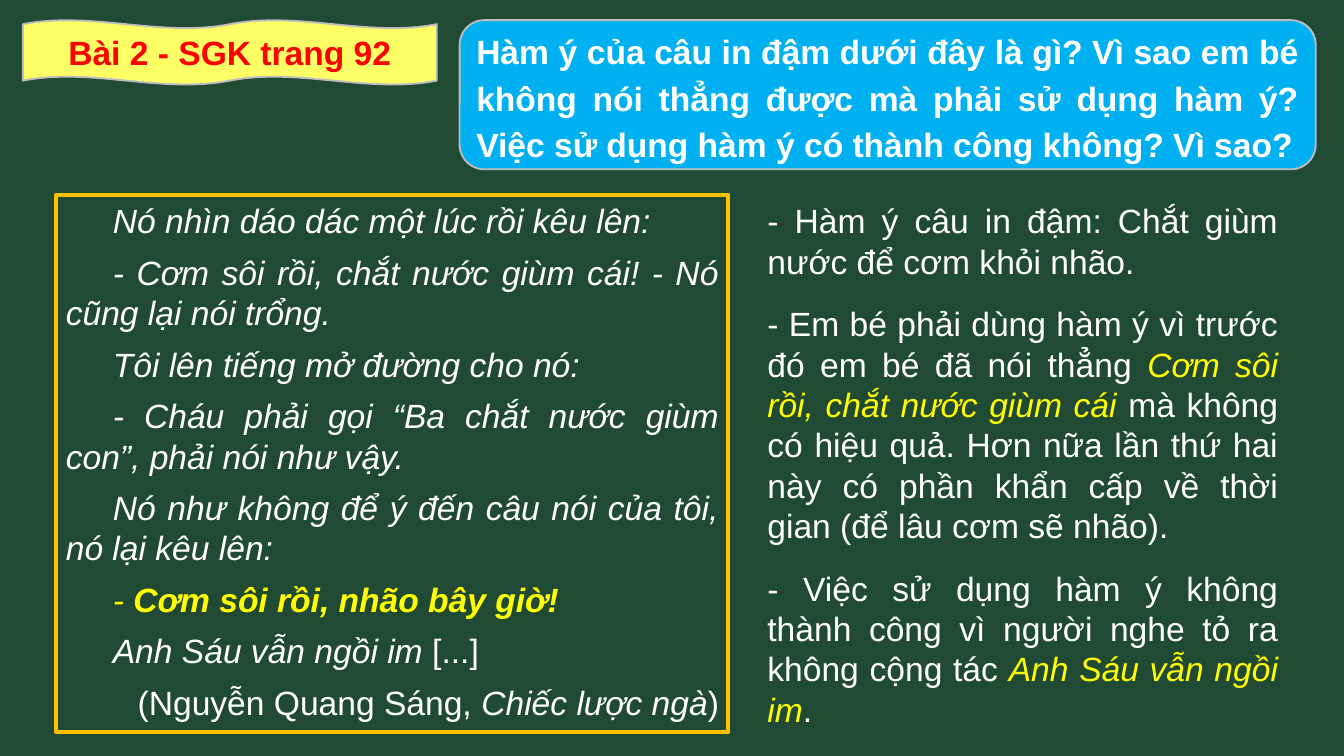
import pptx
import pptx.util
import pptx.dml.color
import pptx.enum.shapes
import pptx.enum.text

Inches = pptx.util.Inches
Pt = pptx.util.Pt
SHAPES = pptx.enum.shapes.MSO_SHAPE
ALIGN = pptx.enum.text.PP_ALIGN
ANCHOR = pptx.enum.text.MSO_ANCHOR
WHITE, YELLOW, GREY = "FFFFFF", "FFFF00", "BDBDBD"


def paint(target, color):
    """Give a fill a solid colour."""
    target.solid()
    target.fore_color.rgb = pptx.dml.color.RGBColor.from_string(color)


def write(shape, paragraphs, align=ALIGN.JUSTIFY, anchor=ANCHOR.TOP, before=0, after=0,
          spacing=1.0, indent=0, inset=(0.07, 0.04)):
    """Each paragraph is a list of (text, colour, style); style holds b and/or i."""
    frame = shape.text_frame
    frame.word_wrap = True
    frame.vertical_anchor = anchor
    frame.margin_left = frame.margin_right = Inches(inset[0])
    frame.margin_top = frame.margin_bottom = Inches(inset[1])
    for index, runs in enumerate(paragraphs):
        paragraph = frame.paragraphs[0] if index == 0 else frame.add_paragraph()
        paragraph.alignment = align
        paragraph.space_before, paragraph.space_after = Pt(before), Pt(after)
        paragraph.line_spacing = spacing
        if indent:
            paragraph._p.get_or_add_pPr().set("indent", str(Inches(indent)))
        for text, color, style in runs:
            run = paragraph.add_run()
            run.text = text
            run.font.name, run.font.size = "Arial", Pt(18)
            run.font.bold, run.font.italic = "b" in style, "i" in style
            paint(run.font.fill, color)


# Widescreen slide, 16 to 9
presentation = pptx.Presentation()
presentation.slide_width = Inches(10)
presentation.slide_height = Inches(10 * 9 / 16)
slide = presentation.slides.add_slide(presentation.slide_layouts[6])
paint(slide.background.fill, "214A34")

# Frames: passage, question and, in front, the exercise label
passage = slide.shapes.add_shape(
    SHAPES.RECTANGLE, Inches(0.42), Inches(1.45), Inches(5), Inches(4))
question = slide.shapes.add_shape(
    SHAPES.ROUNDED_RECTANGLE, Inches(3.42), Inches(0.15), Inches(6.37), Inches(1.11))
answers = slide.shapes.add_textbox(Inches(5.64), Inches(1.45), Inches(3.94), Inches(4.05))
label = slide.shapes.add_shape(
    SHAPES.DOUBLE_WAVE, Inches(0.17), Inches(0.15), Inches(3.08), Inches(0.48))
for shape, fill, line, width in [
    (passage, None, "FFC000", 2.25),
    (question, "00B0F0", GREY, 1),
    (label, "FFFF66", GREY, 1),
]:
    shape.shadow.inherit = False
    if fill:
        paint(shape.fill, fill)
    else:
        shape.fill.background()
    paint(shape.line.fill, line)
    shape.line.width = Pt(width)

# Passage from the story
write(passage, [
    [("Nó nhìn dáo dác một lúc rồi kêu lên:", WHITE, "i")],
    [("- Cơm sôi rồi, chắt nước giùm cái! - Nó cũng lại nói trổng.", WHITE, "i")],
    [("Tôi lên tiếng mở đường cho nó:", WHITE, "i")],
    [("- Cháu phải gọi “Ba chắt nước giùm con”, phải nói như vậy.", WHITE, "i")],
    [("Nó như không để ý đến câu nói của tôi, nó lại kêu lên:", WHITE, "i")],
    [("- ", YELLOW, "i"), ("Cơm sôi rồi, nhão bây giờ!", YELLOW, "bi")],
    [("Anh Sáu vẫn ngồi im ", WHITE, "i"), ("[...]", WHITE, "")],
    [("(Nguyễn Quang Sáng, ", WHITE, ""), ("Chiếc lược ngà", WHITE, "i"), (")", WHITE, "")],
], before=6, indent=0.35)
source_line = passage.text_frame.paragraphs[-1]
source_line.alignment = ALIGN.RIGHT
source_line._p.pPr.set("indent", "0")

# Question and label
write(question, [[("Hàm ý của câu in đậm dưới đây là gì? Vì sao em bé không nói thẳng được "
                   "mà phải sử dụng hàm ý? Việc sử dụng hàm ý có thành công không? Vì sao?",
                   WHITE, "b")]],
      anchor=ANCHOR.MIDDLE, spacing=1.15, after=7.5)
write(label, [[("Bài 2 - SGK trang 92", "FF0000", "b")]],
      align=ALIGN.CENTER, anchor=ANCHOR.MIDDLE, inset=(0.1, 0.05))

# Answers
write(answers, [
    [("- Hàm ý câu in đậm: Chắt giùm nước để cơm khỏi nhão.", WHITE, "")],
    [("- Em bé phải dùng hàm ý vì trước đó em bé đã nói thẳng ", WHITE, ""),
     ("Cơm sôi rồi, chắt nước giùm cái ", YELLOW, "i"),
     ("mà không có hiệu quả. Hơn nữa lần thứ hai này có phần khẩn cấp về thời gian "
      "(để lâu cơm sẽ nhão).", WHITE, "")],
    [("- Việc sử dụng hàm ý không thành công vì người nghe tỏ ra không cộng tác ", WHITE, ""),
     ("Anh Sáu vẫn ngồi im", YELLOW, "i"), (".", WHITE, "")],
], before=12)

presentation.save("out.pptx")
